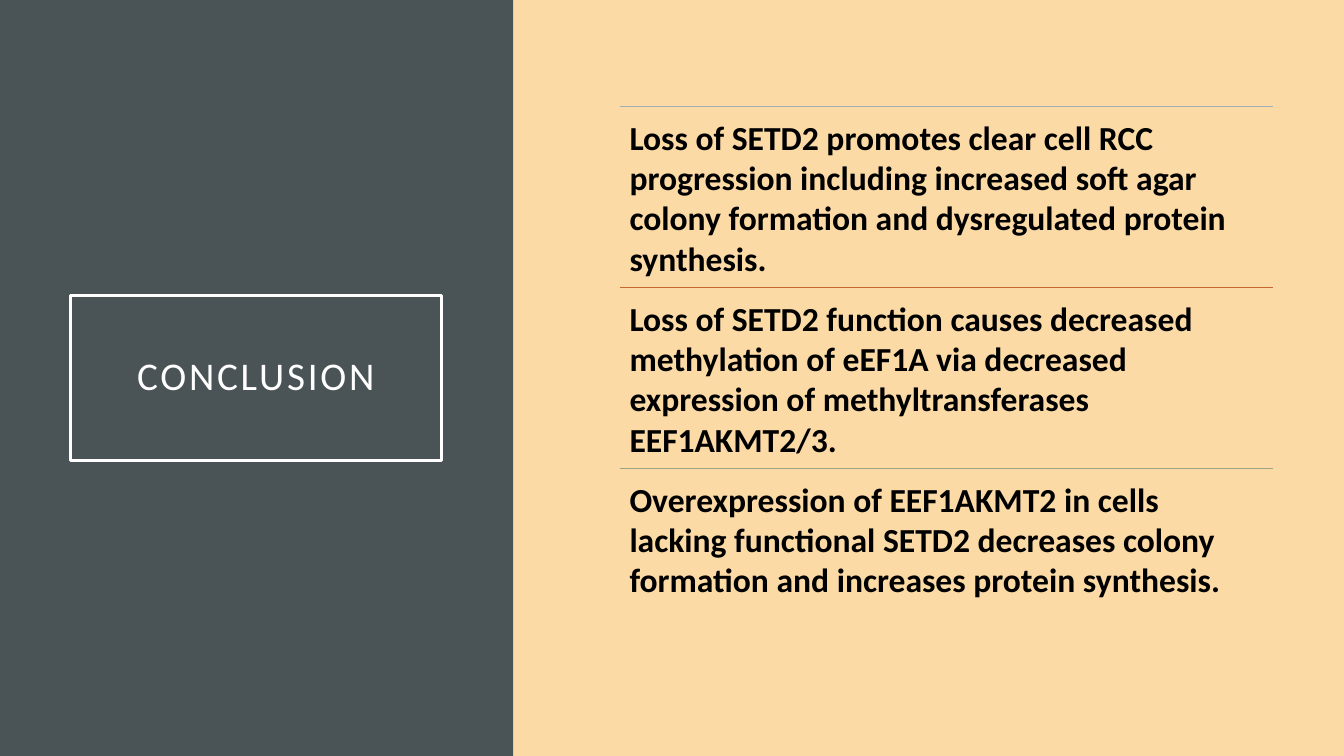
from pptx import Presentation
from pptx.dml.color import RGBColor
from pptx.enum.shapes import MSO_CONNECTOR, MSO_SHAPE
from pptx.enum.text import MSO_ANCHOR, MSO_AUTO_SIZE, PP_ALIGN
from pptx.oxml.ns import qn
from pptx.util import Pt
from lxml.etree import SubElement

TITLE = "CONCLUSION"
FINDINGS = [
    ("9BAFB5", "Loss of SETD2 promotes clear cell RCC progression including increased "
               "soft agar colony formation and dysregulated protein synthesis."),
    ("C96731", "Loss of SETD2 function causes decreased methylation of eEF1A via "
               "decreased expression of methyltransferases EEF1AKMT2/3."),
    ("9CA383", "Overexpression of EEF1AKMT2 in cells lacking functional SETD2 "
               "decreases colony formation and increases protein synthesis."),
]
BACKGROUND, PANEL = "FBDAA5", "4A5356"
SLIDE_WIDTH, SLIDE_HEIGHT, PANEL_WIDTH = 960, 540, 366.5
TITLE_BOX = (50.2, 211, 265.2, 118)
LIST_LEFT, LIST_TOP, LIST_WIDTH, ROW_HEIGHT = 442.6, 76.2, 466.8, 129.2
TITLE_FONT = {"name": "Calibri", "size": Pt(28), "bold": False}
FINDING_FONT = {"name": "Calibri", "size": Pt(24), "bold": True}


def color(hex_text):
    return RGBColor.from_string(hex_text)


def fill_solid(fill, hex_text):
    fill.solid()
    fill.fore_color.rgb = color(hex_text)


def write(box, text, font, hex_text, inset, **para_format):
    """Put one formatted paragraph in a box and return its run."""
    frame = box.text_frame
    frame.word_wrap = True
    frame.auto_size = MSO_AUTO_SIZE.NONE
    for side in ("left", "top", "right", "bottom"):
        setattr(frame, f"margin_{side}", Pt(inset))
    para = frame.paragraphs[0]
    for name, value in para_format.items():
        setattr(para, name, value)
    span = para.add_run()
    span.text = text
    for name, value in font.items():
        setattr(span.font, name, value)
    span.font.color.rgb = color(hex_text)
    return span


def add_panel(page):
    panel = page.shapes.add_shape(
        MSO_SHAPE.RECTANGLE, 0, 0, Pt(PANEL_WIDTH), Pt(SLIDE_HEIGHT))
    panel.shadow.inherit = False
    fill_solid(panel.fill, PANEL)
    panel.line.fill.background()
    title = page.shapes.title._element
    title.addprevious(panel._element)  # keeps the panel behind the title


def format_title(title):
    for name, value in zip(("left", "top", "width", "height"), TITLE_BOX):
        setattr(title, name, Pt(value))
    title.line.color.rgb = color("FFFFFF")
    title.line.width = Pt(2.5)
    span = write(title, TITLE, TITLE_FONT, "FFFFFF", 14.4,
                 alignment=PP_ALIGN.CENTER, line_spacing=0.9)
    title.text_frame.vertical_anchor = MSO_ANCHOR.MIDDLE
    span.font._element.set("spc", "200")


def add_finding(page, top, rule_color, text):
    rule = page.shapes.add_connector(
        MSO_CONNECTOR.STRAIGHT, Pt(LIST_LEFT), Pt(top), Pt(LIST_LEFT + LIST_WIDTH), Pt(top))
    rule.line.color.rgb = color(rule_color)
    rule.line.width = Pt(0.5)
    SubElement(rule._element.spPr, qn("a:effectLst"))
    box = page.shapes.add_textbox(
        Pt(LIST_LEFT), Pt(top), Pt(LIST_WIDTH), Pt(ROW_HEIGHT))
    write(box, text, FINDING_FONT, "000000", 7.2)


def main():
    deck = Presentation()
    deck.slide_width, deck.slide_height = Pt(SLIDE_WIDTH), Pt(SLIDE_HEIGHT)
    page = deck.slides.add_slide(deck.slide_layouts[5])
    fill_solid(page.background.fill, BACKGROUND)
    add_panel(page)
    format_title(page.shapes.title)
    for row, (rule_color, text) in enumerate(FINDINGS):
        add_finding(page, LIST_TOP + row * ROW_HEIGHT, rule_color, text)
    deck.save("out.pptx")


if __name__ == "__main__":
    main()
